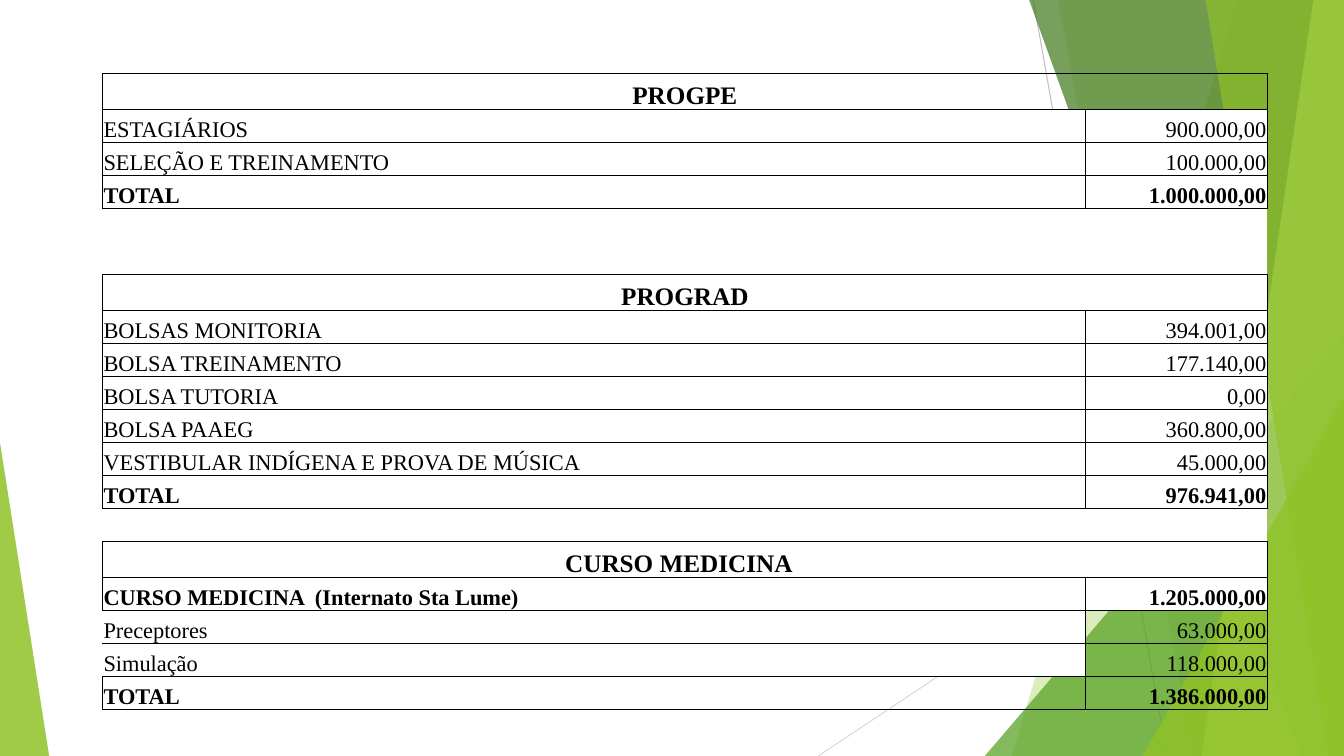
from lxml import etree
from pptx import Presentation
from pptx import util as u
from pptx.dml.color import RGBColor
from pptx.enum import shapes, text
from pptx.oxml import ns

COLORS = {
    "black": "000000", "white": "FFFFFF", "gray": "BFBFBF", "pale gray": "D9D9D9",
    "lime": "90C226", "green": "54A021", "forest": "3F7819", "pale lime": "C0E474",
}
WIDTH, HEIGHT = 33.87, 19.05


def write(cell, words, size=16, bold=False, align=text.PP_ALIGN.LEFT):
    paragraph = cell.text_frame.paragraphs[0]
    paragraph.alignment = align
    run = paragraph.add_run()
    run.text = words
    run.font.name = "Times New Roman"
    run.font.size = u.Pt(size)
    run.font.bold = bold
    run.font.color.rgb = RGBColor.from_string(COLORS["black"])


def tint(facet, color, opacity):
    facet.shadow.inherit = False
    facet.line.fill.background()
    facet.fill.solid()
    facet.fill.fore_color.rgb = RGBColor.from_string(COLORS[color])
    hue = facet.fill._xPr.find(".//" + ns.qn("a:srgbClr"))
    etree.SubElement(hue, ns.qn("a:alpha"), val=str(opacity * 1000))


deck = Presentation()
deck.slide_width, deck.slide_height = u.Cm(WIDTH), u.Cm(HEIGHT)
slide = deck.slides.add_slide(deck.slide_layouts[6])

for x1, y1, x2, y2, color in [
    (26.04, 0, 29.41, HEIGHT, "gray"),
    (WIDTH, 10.24, 20.62, HEIGHT, "pale gray"),
]:
    ray = slide.shapes.add_connector(
        shapes.MSO_CONNECTOR.STRAIGHT, u.Cm(x1), u.Cm(y1), u.Cm(x2), u.Cm(y2))
    ray.line.color.rgb = RGBColor.from_string(COLORS[color])
    ray.line.width = u.Pt(0.75)
    etree.SubElement(ray._element.spPr, ns.qn("a:effectLst"))

for kind, *place, color, opacity in [
    ("band", 31.19, 25.5, "lime", 30),
    ("band", 26.67, 30.05, "lime", 20),
    ("triangle", 24.82, 8.46, 9.05, 1, "green", 72),
    ("band", 25.93, 32.79, "forest", 70),
    ("band", 33.1, 30.28, "pale lime", 70),
    ("band", 30.38, 33.48, "lime", 65),
    ("triangle", 28.8, 9.98, 5.07, 1, "lime", 80),
    ("triangle", 0, 11.15, 1.24, 0, "lime", 85),
]:
    if kind == "band":
        top_x, bottom_x = place
        outline = slide.shapes.build_freeform(u.Cm(top_x), u.Cm(-0.02))
        outline.add_line_segments([
            (u.Cm(WIDTH), u.Cm(-0.02)), (u.Cm(WIDTH), u.Cm(HEIGHT)),
            (u.Cm(bottom_x), u.Cm(HEIGHT))], close=True)
        facet = outline.convert_to_shape()
    else:
        left, top, width, apex = place
        facet = slide.shapes.add_shape(
            shapes.MSO_SHAPE.ISOSCELES_TRIANGLE,
            u.Cm(left), u.Cm(top), u.Cm(width), u.Cm(HEIGHT - top))
        facet.adjustments[0] = apex
    tint(facet, color, opacity)

BUDGET = [
    ("title", "PROGPE", ""),
    ("item", "ESTAGIÁRIOS", "900.000,00"),
    ("item", "SELEÇÃO E TREINAMENTO", "100.000,00"),
    ("total", "TOTAL", "1.000.000,00"),
    ("gap", "", ""),
    ("gap", "", ""),
    ("title", "PROGRAD", ""),
    ("item", "BOLSAS MONITORIA", "394.001,00"),
    ("item", "BOLSA TREINAMENTO", "177.140,00"),
    ("item", "BOLSA TUTORIA", "0,00"),
    ("item", "BOLSA PAAEG", "360.800,00"),
    ("item", "VESTIBULAR INDÍGENA E PROVA DE MÚSICA", "45.000,00"),
    ("total", "TOTAL", "976.941,00"),
    ("gap", "", ""),
    ("title", "CURSO MEDICINA", ""),
    ("total", "CURSO MEDICINA  (Internato Sta Lume)", "1.205.000,00"),
    ("detail", "Preceptores", "63.000,00"),
    ("detail", "Simulação", "118.000,00"),
    ("total", "TOTAL", "1.386.000,00"),
]
COLUMNS = [3.5, 21.26, 4.6]
heights = [0.92 if kind == "title" else 0.83 for kind, _, _ in BUDGET]
last = len(BUDGET) - 1

budget = slide.shapes.add_table(
    len(BUDGET), len(COLUMNS), u.Cm(2.58), u.Cm(1.84),
    u.Cm(sum(COLUMNS)), u.Cm(sum(heights))).table
budget.first_row = budget.horz_banding = False
budget._tbl.tblPr.find(ns.qn("a:tableStyleId")).text = "{2D5ABB26-0587-4C30-8999-92F81FD0307C}"
for column, width in zip(budget.columns, COLUMNS):
    column.width = u.Cm(width)

for r, (kind, label, amount) in enumerate(BUDGET):
    budget.rows[r].height = u.Cm(heights[r])
    for c in range(len(COLUMNS)):
        cell = budget.cell(r, c)
        cell.margin_left = cell.margin_right = cell.margin_top = u.Cm(0.03)
        cell.margin_bottom = 0
        cell.vertical_anchor = text.MSO_ANCHOR.BOTTOM
        if kind == "gap":
            sides = ("T" if BUDGET[r - 1][0] != "gap" else "") + (
                "B" if BUDGET[r + 1][0] != "gap" else "")
        else:
            sides = "LRTB" if c != 1 else "RTB"
            if kind == "detail" and c == 0:
                sides = "RTB"
        for side in "LRTB":
            edge = etree.SubElement(cell._tc.get_or_add_tcPr(), ns.qn("a:ln" + side), w="6350")
            if side in sides:
                ink = etree.SubElement(edge, ns.qn("a:solidFill"))
                etree.SubElement(ink, ns.qn("a:srgbClr"), val=COLORS["black"])
            else:
                etree.SubElement(edge, ns.qn("a:noFill"))
        if r in (0, last) or (kind == "detail" and c == 2):
            cell.fill.background()
        else:
            cell.fill.solid()
            cell.fill.fore_color.rgb = RGBColor.from_string(COLORS["white"])
    if kind == "gap":
        continue
    heading = budget.cell(r, 0)
    if kind == "title":
        heading.merge(budget.cell(r, 2))
        write(heading, label, size=18, bold=True, align=text.PP_ALIGN.CENTER)
        if label == "CURSO MEDICINA":
            heading.margin_right = u.Cm(0.33)
    else:
        heading.merge(budget.cell(r, 1))
        write(heading, label, bold=kind == "total")
        write(budget.cell(r, 2), amount, bold=kind == "total", align=text.PP_ALIGN.RIGHT)

deck.save("out.pptx")
